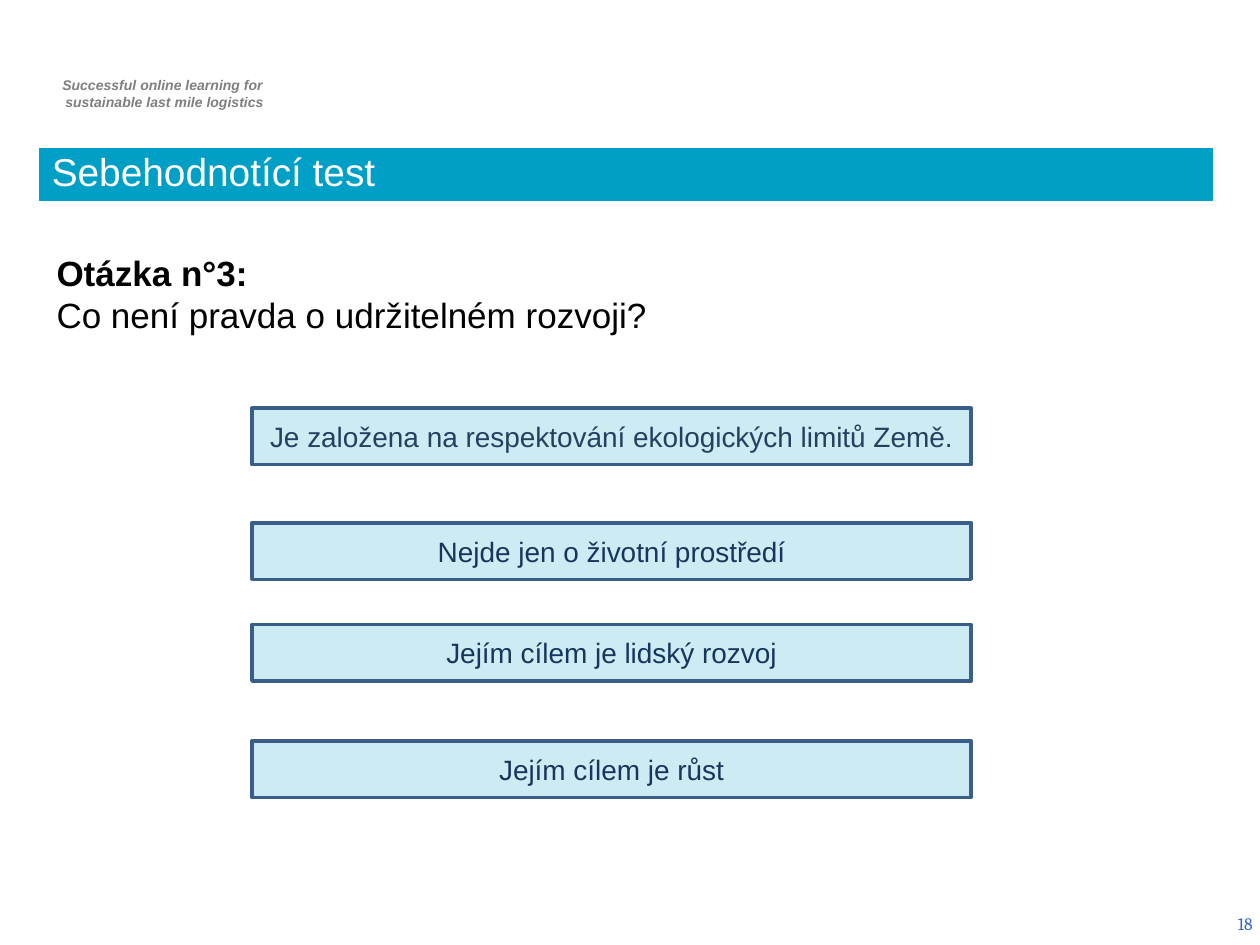
import pptx
import pptx.dml.color
import pptx.enum.shapes
import pptx.enum.text
import pptx.oxml.ns
import pptx.util
import lxml.etree

Cm = pptx.util.Cm
Pt = pptx.util.Pt
ALIGN = pptx.enum.text.PP_ALIGN
ANCHOR = pptx.enum.text.MSO_ANCHOR
TEAL = "009FC6"
NAVY = "17365D"


def tint(code):
    """Return the colour for a hex string."""
    return pptx.dml.color.RGBColor.from_string(code)


def write(frame, text, size=16, color="000000", font="Arial", bold=False,
          slant=False, align=ALIGN.LEFT, space=None):
    """Add one formatted paragraph to a text frame."""
    para = frame.add_paragraph() if frame.text else frame.paragraphs[0]
    run = para.add_run()
    run.text = text
    para.alignment = align
    para.line_spacing = space
    run.font.name = font
    run.font.size = Pt(size)
    run.font.bold = bold
    run.font.italic = slant
    run.font.color.rgb = tint(color)


def paint(shape, fill, line, width, alpha=None):
    """Give a shape its fill, outline and opacity in percent."""
    shape.fill.solid()
    shape.fill.fore_color.rgb = tint(fill)
    shape.line.color.rgb = tint(line)
    shape.line.width = Pt(width)
    if alpha:
        name = pptx.oxml.ns.qn("a:srgbClr")
        color = next(shape.fill._xPr.iter(name))
        node = lxml.etree.SubElement(color, pptx.oxml.ns.qn("a:alpha"))
        node.set("val", str(alpha * 1000))


def panel(slide, left, top, width, height, anchor=ANCHOR.TOP):
    """Add a wrapping text box and return its frame."""
    box = slide.shapes.add_textbox(Cm(left), Cm(top), Cm(width), Cm(height))
    box.text_frame.word_wrap = True
    box.text_frame.vertical_anchor = anchor
    return box.text_frame


def header(slide, left, top, width, height):
    """Place the course tagline."""
    frame = panel(slide, left, top, width, height)
    for text in ("Successful online learning for ",
                 "sustainable last mile logistics"):
        write(frame, text, size=8, color="7F7F7F", bold=True, slant=True,
              align=ALIGN.CENTER)


def banner(slide, left, top, width, height):
    """Place the title on its coloured bar."""
    title = slide.shapes.title
    title.left, title.top = Cm(left), Cm(top)
    title.width, title.height = Cm(width), Cm(height)
    paint(title, TEAL, TEAL, 0.75)
    frame = title.text_frame
    frame.auto_size = pptx.enum.text.MSO_AUTO_SIZE.NONE
    frame.vertical_anchor = ANCHOR.BOTTOM
    write(frame, "Sebehodnotící test", size=22.2, color="FFFFFF", space=0.8)


def question(slide, left, top, width, height):
    """Place the question number and its wording."""
    frame = panel(slide, left, top, width, height)
    write(frame, "Otázka n°3:", size=20, bold=True)
    write(frame, "Co není pravda o udržitelném rozvoji?", size=20)


def answers(slide, left, top, width, height):
    """Place the answer boxes below the given top."""
    rows = (
        (0, "Je založena na respektování ekologických limitů Země.", "244061"),
        (2.31, "Nejde jen o životní prostředí", NAVY),
        (4.36, "Jejím cílem je lidský rozvoj", NAVY),
        (6.71, "Jejím cílem je růst", NAVY),
    )
    for drop, text, color in rows:
        box = slide.shapes.add_shape(
            pptx.enum.shapes.MSO_SHAPE.RECTANGLE,
            Cm(left), Cm(top + drop), Cm(width), Cm(height))
        box.shadow.inherit = False
        paint(box, TEAL, "395E89", 2, alpha=20)
        box.text_frame.word_wrap = True
        box.text_frame.vertical_anchor = ANCHOR.MIDDLE
        write(box.text_frame, text, color=color, align=ALIGN.CENTER)


def number(slide, left, top, width, height):
    """Place the page number."""
    frame = panel(slide, left, top, width, height, ANCHOR.MIDDLE)
    write(frame, "18", size=10, color="3366CC", font="Cambria",
          align=ALIGN.RIGHT)


def main():
    """Build and save the quiz slide."""
    deck = pptx.Presentation()
    deck.slide_width, deck.slide_height = Cm(25.4), Cm(19.05)
    slide = deck.slides.add_slide(deck.slide_layouts[5])
    header(slide, 0.74, 1.42, 5.16, 0.94)
    banner(slide, 0.79, 3, 23.65, 1.04)
    question(slide, 0.89, 4.95, 23.65, 1.96)
    answers(slide, 5.08, 8.23, 14.5, 1.14)
    number(slide, 19.58, 18.11, 5.92, 1.02)
    deck.save("out.pptx")


if __name__ == "__main__":
    main()
